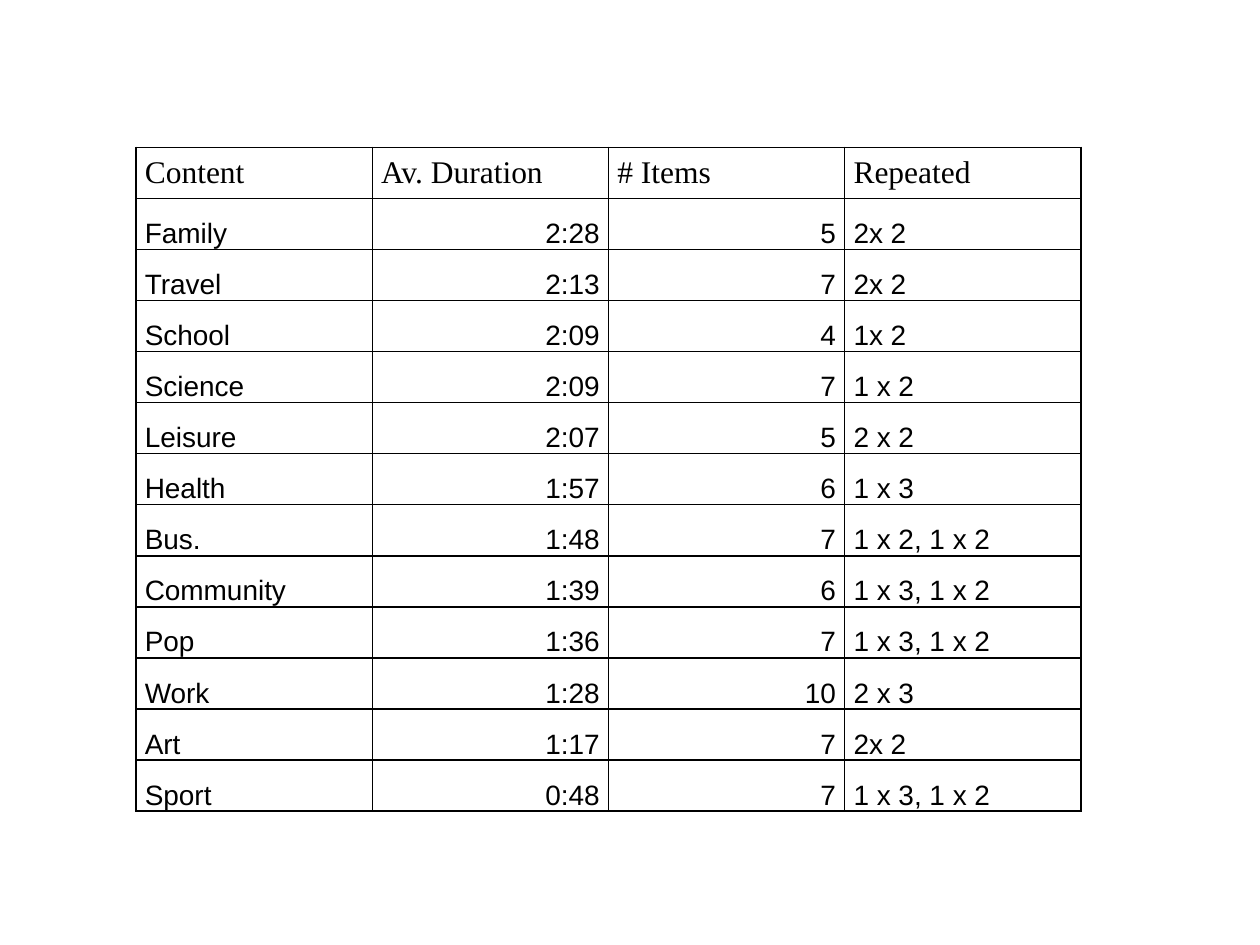
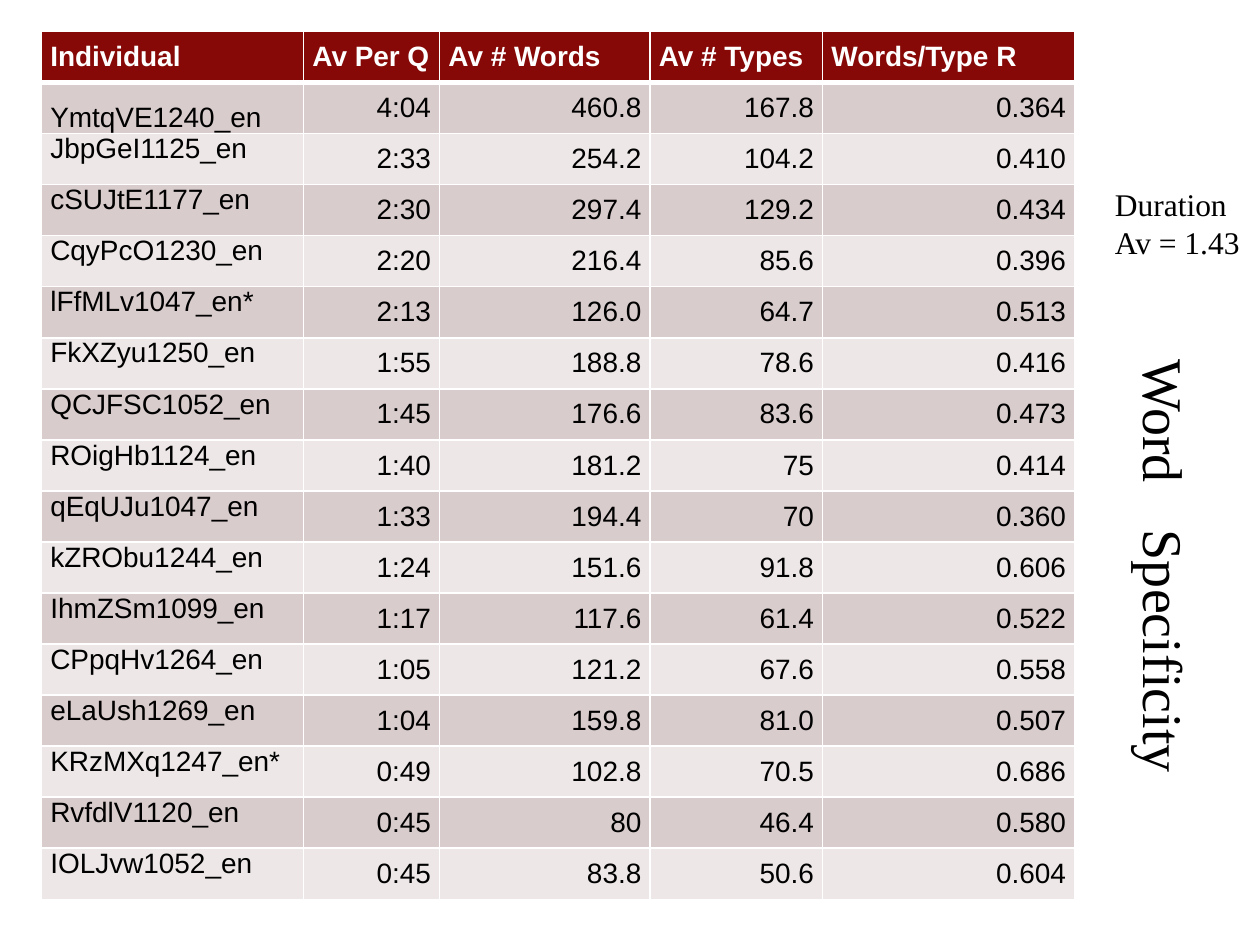
"""Builds two slides that tabulate answer durations by content and by individual."""
from dataclasses import dataclass

from lxml import etree
from pptx import Presentation
from pptx.dml.color import RGBColor
from pptx.enum.text import MSO_ANCHOR, MSO_AUTO_SIZE, PP_ALIGN
from pptx.oxml.ns import qn
from pptx.util import Inches, Pt

LEFT, RIGHT = PP_ALIGN.LEFT, PP_ALIGN.RIGHT
TOP, MIDDLE, BOTTOM = MSO_ANCHOR.TOP, MSO_ANCHOR.MIDDLE, MSO_ANCHOR.BOTTOM
FIT_SHAPE = MSO_AUTO_SIZE.SHAPE_TO_FIT_TEXT


@dataclass(frozen=True)
class Theme:
    serif: str = "Times New Roman"
    sans: str = "Arial"
    black: str = "000000"
    white: str = "FFFFFF"
    header_red: str = "860908"
    bands: tuple = ("EDE7E7", "D9CCCC")
    cell_size: int = 16
    label_size: int = 18
    title_size: int = 32
    cell_space: int = 10
    line: int = 1
    header_line: int = 3


theme = Theme()


def write(frame, text, font=theme.sans, size=theme.cell_size, color=theme.black,
          bold=False, align=LEFT, space_after=0, tab=None):
    for index, line in enumerate(text.split("\n")):
        para = frame.add_paragraph() if index else frame.paragraphs[0]
        if tab:
            tabs = etree.SubElement(para._p.get_or_add_pPr(), qn("a:tabLst"))
            etree.SubElement(tabs, qn("a:tab"), pos=str(Inches(tab)), algn="l")
        para.alignment = align
        para.space_after = Pt(space_after)
        span = para.add_run()
        span.text = line
        span.font.name = font
        span.font.size = Pt(size)
        span.font.bold = bold
        span.font.color.rgb = RGBColor.from_string(color)


def style_cell(cell, anchor, border, bottom_line=theme.line, fill=None):
    cell.margin_left = cell.margin_right = Inches(0.07)
    cell.margin_top = cell.margin_bottom = 0
    cell.vertical_anchor = anchor
    properties = cell._tc.get_or_add_tcPr()
    for side in "LRTB":
        width = bottom_line if side == "B" else theme.line
        edge = etree.SubElement(properties, qn(f"a:ln{side}"), w=str(Pt(width)))
        paint = etree.SubElement(edge, qn("a:solidFill"))
        etree.SubElement(paint, qn("a:srgbClr"), val=border)
    if fill:
        cell.fill.solid()
        cell.fill.fore_color.rgb = RGBColor.from_string(fill)
    else:
        cell.fill.background()


content_rows = [
    ("Content", "Av. Duration", "# Items", "Repeated"),
    ("Family", "2:28", "5", "2x 2"),
    ("Travel", "2:13", "7", "2x 2"),
    ("School", "2:09", "4", "1x 2"),
    ("Science", "2:09", "7", "1 x 2"),
    ("Leisure", "2:07", "5", "2 x 2"),
    ("Health", "1:57", "6", "1 x 3"),
    ("Bus.", "1:48", "7", "1 x 2, 1 x 2"),
    ("Community", "1:39", "6", "1 x 3, 1 x 2"),
    ("Pop", "1:36", "7", "1 x 3, 1 x 2"),
    ("Work", "1:28", "10", "2 x 3"),
    ("Art", "1:17", "7", "2x 2"),
    ("Sport", "0:48", "7", "1 x 3, 1 x 2"),
]
individual_rows = [
    ("Individual", "Av Per Q", "Av # Words", "Av # Types", "Words/Type R"),
    ("YmtqVE1240_en", "4:04", "460.8", "167.8", "0.364"),
    ("JbpGeI1125_en", "2:33", "254.2", "104.2", "0.410"),
    ("cSUJtE1177_en", "2:30", "297.4", "129.2", "0.434"),
    ("CqyPcO1230_en", "2:20", "216.4", "85.6", "0.396"),
    ("lFfMLv1047_en*", "2:13", "126.0", "64.7", "0.513"),
    ("FkXZyu1250_en", "1:55", "188.8", "78.6", "0.416"),
    ("QCJFSC1052_en", "1:45", "176.6", "83.6", "0.473"),
    ("ROigHb1124_en", "1:40", "181.2", "75", "0.414"),
    ("qEqUJu1047_en", "1:33", "194.4", "70", "0.360"),
    ("kZRObu1244_en", "1:24", "151.6", "91.8", "0.606"),
    ("IhmZSm1099_en", "1:17", "117.6", "61.4", "0.522"),
    ("CPpqHv1264_en", "1:05", "121.2", "67.6", "0.558"),
    ("eLaUsh1269_en", "1:04", "159.8", "81.0", "0.507"),
    ("KRzMXq1247_en*", "0:49", "102.8", "70.5", "0.686"),
    ("RvfdlV1120_en", "0:45", "80", "46.4", "0.580"),
    ("IOLJvw1052_en", "0:45", "83.8", "50.6", "0.604"),
]

deck = Presentation()
deck.slide_width, deck.slide_height = Inches(10), Inches(7.5)
blank = deck.slide_layouts[6]
content_page = deck.slides.add_slide(blank)
individual_page = deck.slides.add_slide(blank)

tables = []
for page, rows, place in (
    (content_page, content_rows, (1.08, 1.17, 7.5, 5.27)),
    (individual_page, individual_rows, (0.33, 0.25, 8.2, 6.89)),
):
    table = page.shapes.add_table(len(rows), len(rows[0]), *map(Inches, place)).table
    table.first_row = table.horz_banding = False
    tables.append(table)
content_table, individual_table = tables

for row, values in enumerate(content_rows):
    for column, text in enumerate(values):
        cell = content_table.cell(row, column)
        style_cell(cell, BOTTOM if row else MIDDLE, theme.black)
        if row:
            write(cell.text_frame, text, align=RIGHT if column in (1, 2) else LEFT,
                  space_after=theme.cell_space)
        else:
            write(cell.text_frame, text, font=theme.serif, size=theme.label_size,
                  space_after=theme.cell_space)

for column, width in zip(individual_table.columns, (2.08, 1.08, 1.67, 1.37, 2)):
    column.width = Inches(width)
for row, values in enumerate(individual_rows):
    for column, text in enumerate(values):
        cell = individual_table.cell(row, column)
        if row == 0:
            style_cell(cell, MIDDLE, theme.white, theme.header_line, theme.header_red)
            write(cell.text_frame, text, color=theme.white, bold=True,
                  space_after=theme.cell_space)
        else:
            name_anchor = BOTTOM if row == 1 else TOP
            style_cell(cell, MIDDLE if column else name_anchor, theme.white,
                       fill=theme.bands[row % 2])
            write(cell.text_frame, text, align=RIGHT if column else LEFT,
                  space_after=theme.cell_space)

for place, rotation, inset, text, size, tab in (
    ((8.75, 1.42, 1.25, 0.71), 0, 0.1, "Duration\nAv = 1.43", theme.label_size, None),
    ((7.14, 4.32, 4.21, 0.64), 90, 0.32, "Word\tSpecificity", theme.title_size, 1.35),
):
    box = individual_page.shapes.add_textbox(*map(Inches, place))
    box.rotation = rotation
    box.text_frame.word_wrap = True
    box.text_frame.auto_size = FIT_SHAPE
    box.text_frame.margin_left = Inches(inset)
    write(box.text_frame, text, font=theme.serif, size=size, tab=tab)

deck.save("out.pptx")
